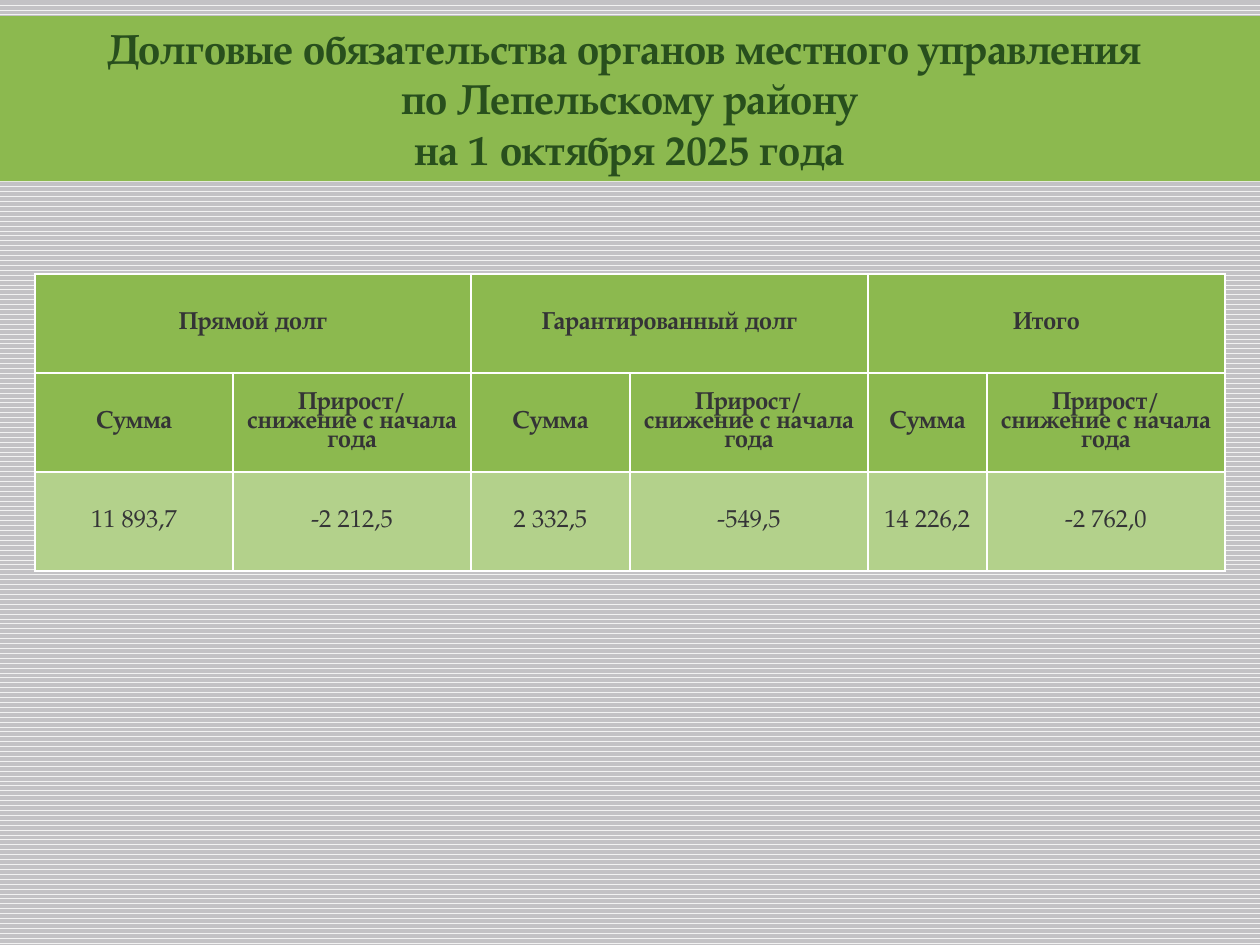
from dataclasses import dataclass

from lxml.etree import SubElement
from pptx import Presentation
from pptx.dml.color import RGBColor
from pptx.enum.dml import MSO_PATTERN
from pptx.enum.text import MSO_ANCHOR as Anchor, MSO_AUTO_SIZE as AutoSize, PP_ALIGN as Align
from pptx.oxml.ns import qn
from pptx.util import Emu, Pt

EMU_PER_PX = 914400 / 126


@dataclass(frozen=True)
class Theme:
    font: str = "TeX Gyre Pagella"
    green: str = "8CB94F"
    light_green: str = "B3D18B"
    title_text: str = "284F1D"
    table_text: str = "343436"
    border: str = "FFFFFF"
    stripe: str = "F2F2F2"
    backdrop: str = "C3C2C5"
    title_size: int = 24
    table_size: int = 14
    border_width: int = 1


THEME = Theme()

HEADING = [
    "Долговые обязательства органов местного управления ",
    "по Лепельскому району",
    "на 1 октября 2025 года",
]
DEBT_KINDS = ["Прямой долг", "Гарантированный долг", "Итого"]
MEASURES = ["Сумма", "Прирост/снижение с начала года"]
AMOUNTS = ["11 893,7", "-2 212,5", "2 332,5", "-549,5", "14 226,2", "-2 762,0"]
AMOUNT_WIDTHS = [198, 159, 119]
CHANGE_WIDTH = 238
ROW_HEIGHT = 99


def px(length):
    return Emu(round(length * EMU_PER_PX))


def rgb(color):
    return RGBColor.from_string(color)


def fill_solid(fill, color):
    fill.solid()
    fill.fore_color.rgb = rgb(color)


def format_text(frame, size, color, bold, line_spacing):
    for paragraph in frame.paragraphs:
        paragraph.alignment = Align.CENTER
        paragraph.line_spacing = line_spacing
        for run in paragraph.runs:
            run.font.name = THEME.font
            run.font.size = Pt(size)
            run.font.bold = bold
            run.font.color.rgb = rgb(color)


def set_background(slide):
    fill = slide.background.fill
    fill.patterned()
    fill.pattern = MSO_PATTERN.WAVE
    fill.fore_color.rgb = rgb(THEME.stripe)
    fill.back_color.rgb = rgb(THEME.backdrop)


def add_heading(slide):
    heading = slide.shapes.title
    heading.left, heading.top, heading.width, heading.height = px(-1), px(16), px(1261), px(165)
    fill_solid(heading.fill, THEME.green)
    frame = heading.text_frame
    frame.text = "\n".join(HEADING)
    frame.word_wrap = True
    frame.auto_size = AutoSize.SHAPE_TO_FIT_TEXT
    frame.vertical_anchor = Anchor.TOP
    format_text(frame, THEME.title_size, THEME.title_text, True, 1.0)


def add_borders(cell):
    properties = cell._tc.get_or_add_tcPr()
    for side in ("lnL", "lnR", "lnT", "lnB"):
        line = SubElement(properties, qn(f"a:{side}"), w=str(Pt(THEME.border_width)))
        color = SubElement(SubElement(line, qn("a:solidFill")), qn("a:srgbClr"))
        color.set("val", THEME.border)


def format_cell(cell, text, is_header):
    cell.text_frame.text = text
    add_borders(cell)
    fill_solid(cell.fill, THEME.green if is_header else THEME.light_green)
    cell.vertical_anchor = Anchor.MIDDLE
    format_text(cell.text_frame, THEME.table_size, THEME.table_text, is_header, 0.8)


def add_debt_table(slide):
    widths = [width for amount in AMOUNT_WIDTHS for width in (amount, CHANGE_WIDTH)]
    kinds = [text for kind in DEBT_KINDS for text in (kind, "")]
    rows = [kinds, MEASURES * len(DEBT_KINDS), AMOUNTS]
    table = slide.shapes.add_table(
        len(rows), len(widths), px(35), px(274), px(sum(widths)), px(ROW_HEIGHT * len(rows))
    ).table
    table.first_row = table.horz_banding = False
    for column, width in zip(table.columns, widths):
        column.width = px(width)
    for r, texts in enumerate(rows):
        table.rows[r].height = px(ROW_HEIGHT)
        for c, text in enumerate(texts):
            format_cell(table.cell(r, c), text, is_header=r < 2)
    for c in range(0, len(widths), 2):
        table.cell(0, c).merge(table.cell(0, c + 1))


def main():
    presentation = Presentation()
    presentation.slide_width, presentation.slide_height = px(1260), px(945)
    slide = presentation.slides.add_slide(presentation.slide_layouts[5])
    set_background(slide)
    add_heading(slide)
    add_debt_table(slide)
    presentation.save("out.pptx")


if __name__ == "__main__":
    main()
